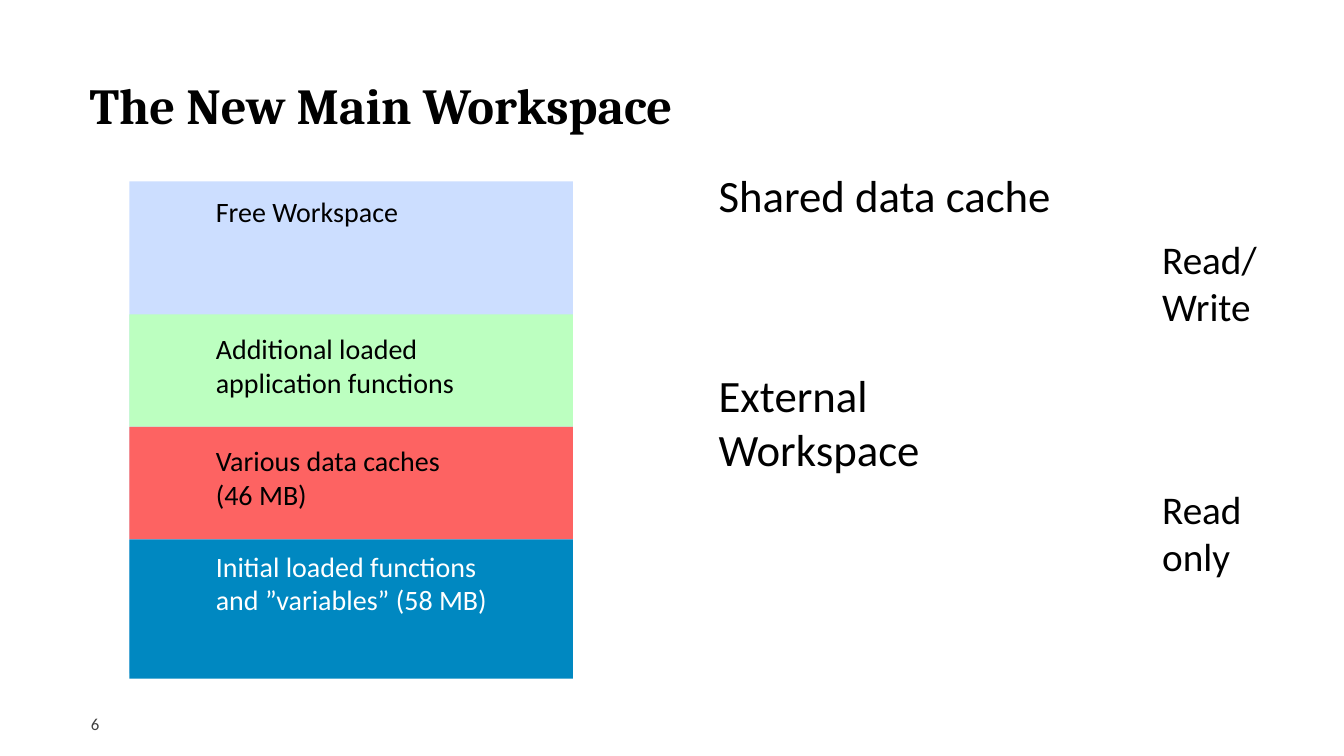
from pptx import Presentation
from pptx.dml.color import RGBColor
from pptx.enum.shapes import MSO_SHAPE as Geo
from pptx.enum.text import MSO_ANCHOR as Anchor, PP_ALIGN as Align
from pptx.util import Cm, Pt


def color(code):
    return RGBColor.from_string(code)


class Page:
    font = "Calibri"
    ink = "000000"

    def __init__(self, deck):
        self.slide = deck.slides.add_slide(deck.slide_layouts[6])

    def block(self, left, top, width, height, fill):
        shape = self.slide.shapes.add_shape(
            Geo.RECTANGLE, Cm(left), Cm(top), Cm(width), Cm(height))
        shape.shadow.inherit = False
        shape.fill.solid()
        shape.fill.fore_color.rgb = color(fill)
        shape.line.fill.background()

    def text(self, left, top, width, height, lines, size, ink=None,
             font=None, bold=False, space=None, right=0):
        box = self.slide.shapes.add_textbox(
            Cm(left), Cm(top), Cm(width), Cm(height))
        frame = box.text_frame
        frame.word_wrap = True
        frame.vertical_anchor = Anchor.TOP
        frame.margin_left = frame.margin_top = frame.margin_bottom = 0
        frame.margin_right = Cm(right)
        for i, line in enumerate(lines):
            para = frame.add_paragraph() if i else frame.paragraphs[0]
            para.alignment = Align.LEFT
            if space:
                para.line_spacing = space
            run = para.add_run()
            run.text = line
            run.font.name = font or self.font
            run.font.size = Pt(size)
            run.font.bold = bold
            run.font.color.rgb = color(ink or self.ink)


def main():
    deck = Presentation()
    deck.slide_width, deck.slide_height = Cm(33.87), Cm(19.05)
    page = Page(deck)

    page.text(2.26, 2.03, 29.34, 2.13, ["The New Main Workspace"], 36,
              font="Cambria", bold=True, space=0.9)
    page.text(2.29, 17.93, 1.4, 0.51, ["6"], 12, ink="414141", space=Pt(16))

    layers = [
        (4.57, 12.4, "CCDEFF", 4.9, 1.04, ["Free Workspace"], "000000"),
        (13.59, 3.51, "0088C1", 13.84, 1.7,
         ["Initial loaded functions and ”variables” (58 MB)"], "FFFFFF"),
        (7.92, 2.83, "BCFFC0", 8.36, 1.7,
         ["Additional loaded application functions"], "000000"),
        (10.76, 2.83, "FD6362", 11.18, 1.7,
         ["Various data caches", "(46 MB)"], "000000"),
    ]
    for top, height, fill, start, depth, lines, ink in layers:
        page.block(3.26, top, 11.18, height, fill)
        page.text(5.44, start, 7.52, depth, lines, 20, ink=ink)

    for top, label in [(9.27, "External Workspace"), (4.22, "Shared data cache")]:
        page.text(18.11, top, 9.09, 1.37, [label], 32, right=0.5)

    page.text(29.29, 5.94, 3.43, 2.69, ["Read/", "Write"], 28)
    page.text(29.29, 12.22, 2.72, 2.46, ["Read", "only"], 28)

    deck.save("out.pptx")


if __name__ == "__main__":
    main()
